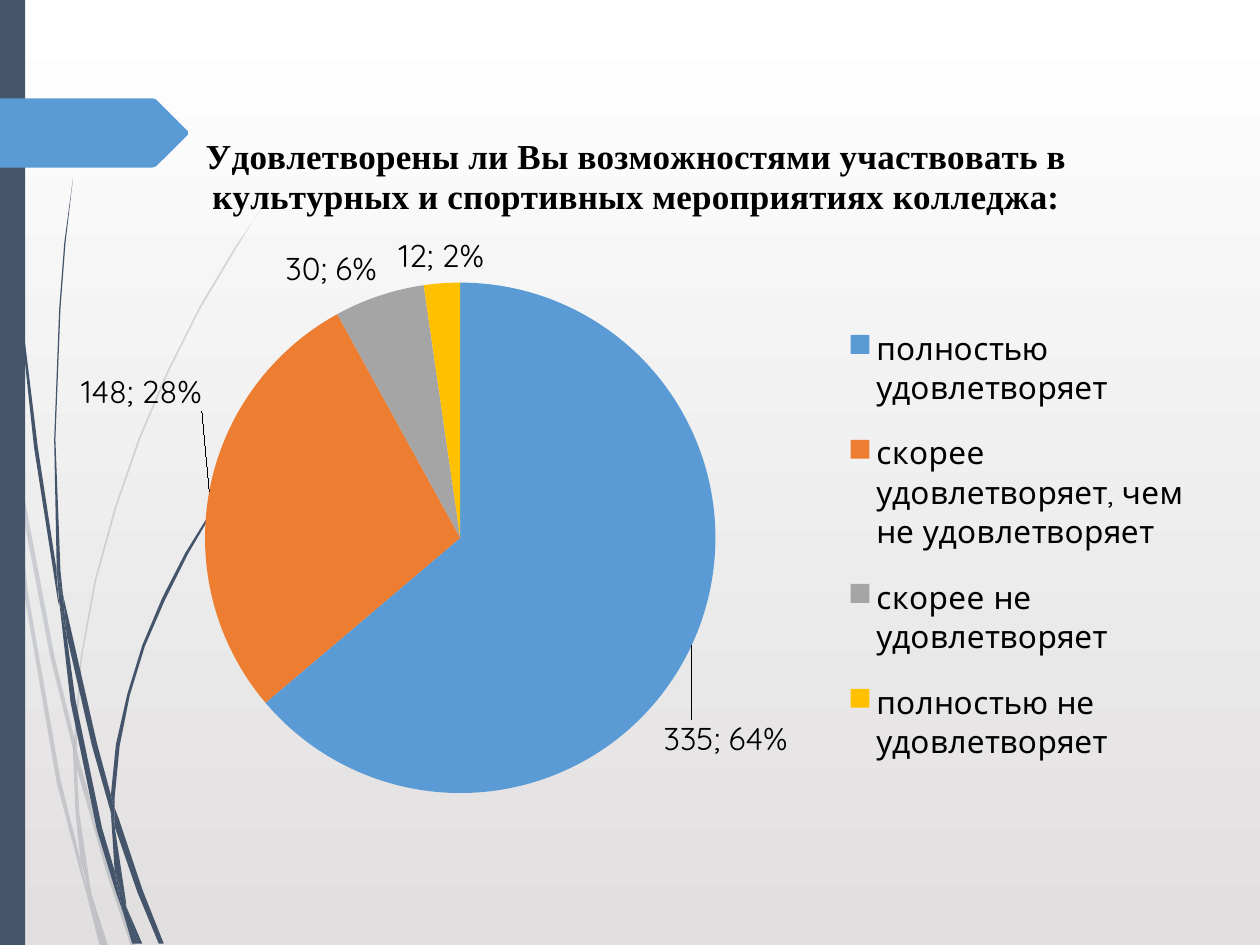
from lxml import etree
from pptx import Presentation
from pptx.chart.data import CategoryChartData
from pptx.dml.color import RGBColor
from pptx.enum import chart as kinds, shapes
from pptx.oxml import ns
from pptx.util import Pt

SLATE = RGBColor(0x44, 0x54, 0x6A)
BLUE = RGBColor(0x5B, 0x9B, 0xD5)
ORANGE = RGBColor(0xED, 0x7D, 0x31)
GRAY = RGBColor(0xA5, 0xA5, 0xA5)
GOLD = RGBColor(0xFF, 0xC0, 0x00)
WHITE = RGBColor(0xFF, 0xFF, 0xFF)
MIST = RGBColor(0xE1, 0xDF, 0xDF)
BLACK = RGBColor(0, 0, 0)

GRID = Pt(0.72)  # outlines are given in hundredths of an inch

QUESTION = ("Удовлетворены ли Вы возможностями участвовать в "
            "культурных и спортивных мероприятиях колледжа:")
ANSWERS = [
    ("полностью удовлетворяет", 335, BLUE),
    ("скорее удовлетворяет, чем не удовлетворяет", 148, ORANGE),
    ("скорее не удовлетворяет", 30, GRAY),
    ("полностью не удовлетворяет", 12, GOLD),
]
# Point index -> label shift as a share of the chart size
LABEL_SHIFTS = {0: (-0.03, 0.1), 1: (0, -0.11)}

PALE_STRANDS = [
    [(8, 350), (6, 322), (0, 282), (0, 299), (7, 344)],
    [(40, 522), (59, 599), (59, 586), (43, 520), (10, 345), (12, 376)],
    [(64, 607), (61, 596), (61, 610), (85, 694), (104, 751), (108, 751), (88, 692)],
    [(83, 751), (86, 751), (73, 711)],
    [(64, 683), (48, 619), (22, 469), (12, 376), (8, 350), (19, 470), (45, 621),
     (64, 693), (70, 714), (69, 707)],
    [(58, 599), (60, 646), (64, 683), (67, 692), (73, 711), (72, 706), (63, 646),
     (61, 610), (61, 608)],
    [(61, 584), (65, 522), (76, 462), (92, 404), (111, 349), (134, 295), (159, 245),
     (187, 198), (201, 175), (217, 154), (217, 153), (201, 175), (186, 197),
     (158, 244), (133, 294), (110, 348), (91, 403), (75, 461), (64, 522),
     (59, 584), (59, 586), (61, 596)],
    [(70, 714), (79, 751), (82, 751)],
    [(61, 608), (61, 610), (61, 596), (59, 586), (58, 599)],
    [(67, 692), (65, 683), (69, 707), (70, 714), (82, 751), (83, 751), (73, 711)],
]
DARK_STRANDS = [
    [(5, 110), (14, 233), (27, 355), (46, 477), (47, 481), (45, 457), (45, 453),
     (30, 355), (15, 232), (6, 109), (4, 48), (3, 0), (2, 0), (3, 48)],
    [(73, 592), (88, 645), (88, 633), (88, 631), (77, 590), (50, 472), (53, 505)],
    [(94, 649), (91, 641), (91, 656), (109, 708), (126, 749), (130, 749), (113, 706)],
    [(91, 691), (81, 657), (60, 556), (53, 505), (47, 477), (56, 557), (77, 659),
     (92, 708), (97, 722), (96, 717)],
    [(50, 472), (48, 453), (44, 349), (48, 245), (52, 193), (58, 141), (51, 193),
     (47, 245), (43, 349), (45, 449), (49, 472)],
    [(110, 749), (113, 749), (100, 719)],
    [(47, 477), (53, 505), (50, 472), (49, 472), (45, 449), (45, 453)],
    [(91, 633), (95, 592), (103, 552), (115, 513), (131, 476), (149, 440), (169, 406),
     (191, 374), (203, 359), (216, 344), (215, 344), (203, 358), (191, 373),
     (168, 405), (147, 439), (129, 474), (113, 512), (101, 551), (92, 591),
     (88, 631), (91, 641)],
    [(97, 722), (105, 749), (108, 749)],
    [(88, 645), (91, 691), (96, 706), (100, 719), (100, 716), (91, 656), (90, 651)],
    [(88, 645), (90, 651), (91, 656), (91, 641), (88, 631), (88, 633)],
    [(96, 706), (91, 691), (96, 717), (97, 722), (108, 749), (110, 749), (100, 719)],
]
TAG = [(149, 107), (124, 132), (121, 133), (0, 133), (0, 78), (121, 78),
       (124, 79), (149, 104)]


def set_layout(parent, after=None, target=None, **places):
    """Give a chart part a manual position, in shares of the chart size."""
    for stale in parent.findall(ns.qn("c:layout")):
        parent.remove(stale)
    layout = etree.Element(ns.qn("c:layout"))
    manual = etree.SubElement(layout, ns.qn("c:manualLayout"))
    if target:
        etree.SubElement(manual, ns.qn("c:layoutTarget")).set("val", target)
    if target or "w" in places or after == "c:tx":
        for mode in ("c:xMode", "c:yMode"):
            etree.SubElement(manual, ns.qn(mode)).set("val", "edge")
    for name, share in places.items():
        etree.SubElement(manual, ns.qn("c:" + name)).set("val", str(share))
    if after:
        parent.find(ns.qn(after)).addnext(layout)
    else:
        parent.insert(0, layout)


class Painter:
    body_font = "Quicksand"
    title_font = "Times New Roman"
    body_size = Pt(18)
    title_size = Pt(20)

    def __init__(self, page):
        self.page = page

    def background(self, top, bottom):
        fill = self.page.background.fill
        fill.gradient()
        fill.gradient_angle = 270
        for stop, color, place in zip(fill.gradient_stops, (top, bottom), (0, 1)):
            stop.color.rgb = color
            stop.position = place

    def paint(self, shape, color, alpha=100):
        shape.shadow.inherit = False
        shape.fill.solid()
        shape.fill.fore_color.rgb = color
        shape.line.fill.background()
        if alpha < 100:
            tint = shape.fill._xPr.find(".//" + ns.qn("a:srgbClr"))
            etree.SubElement(tint, ns.qn("a:alpha")).set("val", str(alpha * 1000))

    def outline(self, points, color, alpha=100, home=None):
        owner = home or self.page
        builder = owner.shapes.build_freeform(*points[0], scale=GRID)
        builder.add_line_segments(points[1:], close=True)
        self.paint(builder.convert_to_shape(), color, alpha)

    def strands(self, outlines, color, alpha=100):
        group = self.page.shapes.add_group_shape()
        for points in outlines:
            self.outline(points, color, alpha, group)

    def bar(self, left, top, width, height, color):
        box = self.page.shapes.add_shape(
            shapes.MSO_SHAPE.RECTANGLE, Pt(left), Pt(top), Pt(width), Pt(height))
        self.paint(box, color)

    def style(self, font, size, name, bold=False):
        font.size, font.name, font.bold = size, name, bold
        font.color.rgb = BLACK

    def pie(self, left, top, width, height, title, answers, shifts):
        data = CategoryChartData()
        data.categories = [answer for answer, _, _ in answers]
        data.add_series(title, [count for _, count, _ in answers])
        chart = self.page.shapes.add_chart(
            kinds.XL_CHART_TYPE.PIE, Pt(left), Pt(top), Pt(width), Pt(height), data).chart
        self.style(chart.font, self.body_size, self.body_font)
        plot = chart.plots[0]
        plot.vary_by_categories = True
        series = plot.series[0]

        # Title
        chart.has_title = True
        frame = chart.chart_title.text_frame
        frame.text = title
        self.style(frame.paragraphs[0].font, self.title_size, self.title_font, True)
        set_layout(chart.chart_title._element, "c:tx", x=0.125, y=0.045)

        # Legend and plot area
        chart.has_legend = True
        chart.legend.position = kinds.XL_LEGEND_POSITION.RIGHT
        chart.legend.include_in_layout = False
        self.style(chart.legend.font, self.body_size, self.body_font)
        set_layout(chart.legend._element, "c:legendPos", x=0.68, y=0.29, w=0.3, h=0.68)
        area = chart._chartSpace.find(".//" + ns.qn("c:plotArea"))
        set_layout(area, target="inner", x=0.13, y=0.26, w=0.44, h=0.72)

        # Slices and their labels
        for index, (_, _, color) in enumerate(answers):
            fill = series.points[index].format.fill
            fill.solid()
            fill.fore_color.rgb = color
        labels = series.data_labels
        labels.show_value = labels.show_percentage = True
        labels.position = kinds.XL_LABEL_POSITION.OUTSIDE_END
        self.style(labels.font, self.body_size, self.body_font)
        for index in shifts:
            label = series.points[index].data_label
            label.position = kinds.XL_LABEL_POSITION.OUTSIDE_END
            self.style(label.font, self.body_size, self.body_font)
        root = labels._element
        for item in root.findall(ns.qn("c:dLbl")):
            x, y = shifts[int(item.find(ns.qn("c:idx")).get("val"))]
            set_layout(item, "c:idx", x=x, y=y)
        for item in [root, *root.findall(ns.qn("c:dLbl"))]:
            item.find(ns.qn("c:showPercent")).set("val", "1")
            separator = etree.Element(ns.qn("c:separator"))
            separator.text = "; "
            item.find(ns.qn("c:showBubbleSize")).addnext(separator)


def main():
    deck = Presentation()
    deck.slide_width, deck.slide_height = Pt(720), Pt(540)
    painter = Painter(deck.slides.add_slide(deck.slide_layouts[6]))

    # Backdrop
    painter.background(WHITE, MIST)
    painter.strands(PALE_STRANDS, SLATE, alpha=20)
    painter.strands(DARK_STRANDS, SLATE)
    painter.bar(0, 0, 14.4, 540, SLATE)
    painter.outline(TAG, BLUE)

    # Survey results
    painter.pie(31, 54.7, 663, 407.5, QUESTION, ANSWERS, LABEL_SHIFTS)
    deck.save("out.pptx")


if __name__ == "__main__":
    main()
